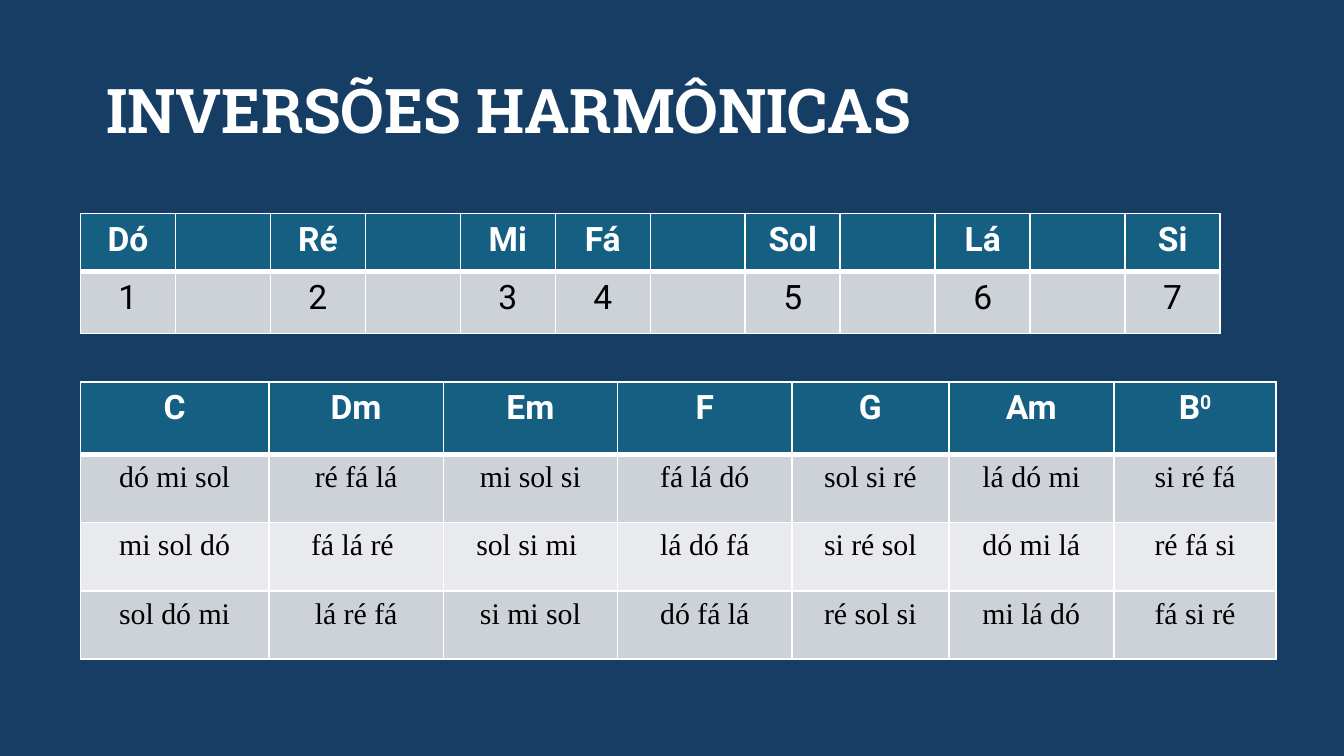
from lxml import etree
from pptx import Presentation
from pptx.dml.color import RGBColor
from pptx.enum.text import MSO_ANCHOR, MSO_AUTO_SIZE, PP_ALIGN
from pptx.oxml import parse_xml
from pptx.oxml.ns import nsdecls
from pptx.util import Cm, Pt

CENTER, LEFT = PP_ALIGN.CENTER, PP_ALIGN.LEFT
MIDDLE = MSO_ANCHOR.MIDDLE
NO_AUTOFIT = MSO_AUTO_SIZE.NONE
TITLE_ONLY = 5

COLORS = {
    "background": "163E64",
    "header": "156082",
    "band_dark": "CCD2D8",
    "band_light": "E8EAED",
    "white": "FFFFFF",
    "black": "000000",
}


def set_font(paragraph, name, size, color, bold):
    font = paragraph.font
    font.name, font.size, font.bold = name, Pt(size), bold
    font.color.rgb = RGBColor.from_string(COLORS[color])


def set_borders(cell, widths):
    properties = cell._tc.get_or_add_tcPr()
    for position, (side, width) in enumerate(widths.items()):
        line = parse_xml(
            f'<a:{side} {nsdecls("a")} w="{Pt(width)}"><a:solidFill>'
            f'<a:srgbClr val="{COLORS["white"]}"/></a:solidFill></a:{side}>')
        properties.insert(position, line)


presentation = Presentation()
presentation.slide_width, presentation.slide_height = Cm(25.4), Cm(14.28)
slide = presentation.slides.add_slide(presentation.slide_layouts[TITLE_ONLY])
slide.background.fill.solid()
slide.background.fill.fore_color.rgb = RGBColor.from_string(COLORS["background"])

# Title
title = slide.shapes.title
title.left, title.top, title.width, title.height = Cm(1.75), Cm(0.76), Cm(21.9), Cm(2.77)
title.text_frame.text = "INVERSÕES HARMÔNICAS"
title.text_frame.auto_size = NO_AUTOFIT
title.text_frame.vertical_anchor = MIDDLE
paragraph = title.text_frame.paragraphs[0]
paragraph.alignment, paragraph.line_spacing = LEFT, 0.9
set_font(paragraph, "Roboto Slab", 33, "white", True)

# Scale degrees over the twelve semitones, and the chords with their inversions
scale = [
    ["Dó", "", "Ré", "", "Mi", "Fá", "", "Sol", "", "Lá", "", "Si"],
    ["1", "", "2", "", "3", "4", "", "5", "", "6", "", "7"],
]
chords = [
    ["C", "Dm", "Em", "F", "G", "Am", "B"],
    ["dó mi sol", "ré fá lá", "mi sol si", "fá lá dó", "sol si ré", "lá dó mi", "si ré fá"],
    ["mi sol dó", "fá lá ré ", "sol si mi ", "lá dó fá", "si ré sol", "dó mi lá", "ré fá si"],
    ["sol dó mi", "lá ré fá", "si mi sol", "dó fá lá", "ré sol si", "mi lá dó", "fá si ré"],
]
# Rows, top, column widths, row heights, body font and size
tables = [
    (scale, 4.03, [1.795] * 12, [1.1, 1.17], "Roboto", 18),
    (chords, 7.21, [3.56, 3.3, 3.29, 3.3, 2.96, 3.12, 3.07], [1.37] + [1.29] * 3,
     "Times New Roman", 16),
]

for rows, top, widths, heights, body_font, body_size in tables:
    table = slide.shapes.add_table(
        len(rows), len(widths), Cm(1.52), Cm(top),
        Cm(sum(widths)), Cm(sum(heights))).table
    for column, width in zip(table.columns, widths):
        column.width = Cm(width)
    for r, (texts, height) in enumerate(zip(rows, heights)):
        table.rows[r].height = Cm(height)
        fill = "header" if r == 0 else "band_dark" if r % 2 else "band_light"
        for c, text in enumerate(texts):
            cell = table.cell(r, c)
            cell.fill.solid()
            cell.fill.fore_color.rgb = RGBColor.from_string(COLORS[fill])
            set_borders(cell, {"lnL": 1, "lnR": 1, "lnT": 3 if r == 1 else 1,
                               "lnB": 3 if r == 0 else 1})
            paragraph = cell.text_frame.paragraphs[0]
            paragraph.alignment = CENTER
            if text:
                paragraph.add_run().text = text
            if r == 0:
                set_font(paragraph, "Roboto", 18, "white", True)
            else:
                set_font(paragraph, body_font, body_size, "black", False)

# Diminished sign on the last chord, the B of the second table
degree = table.cell(0, 6).text_frame.paragraphs[0].add_run()
degree.text = "0"
degree.font._element.set("baseline", "30000")

presentation.save("out.pptx")
